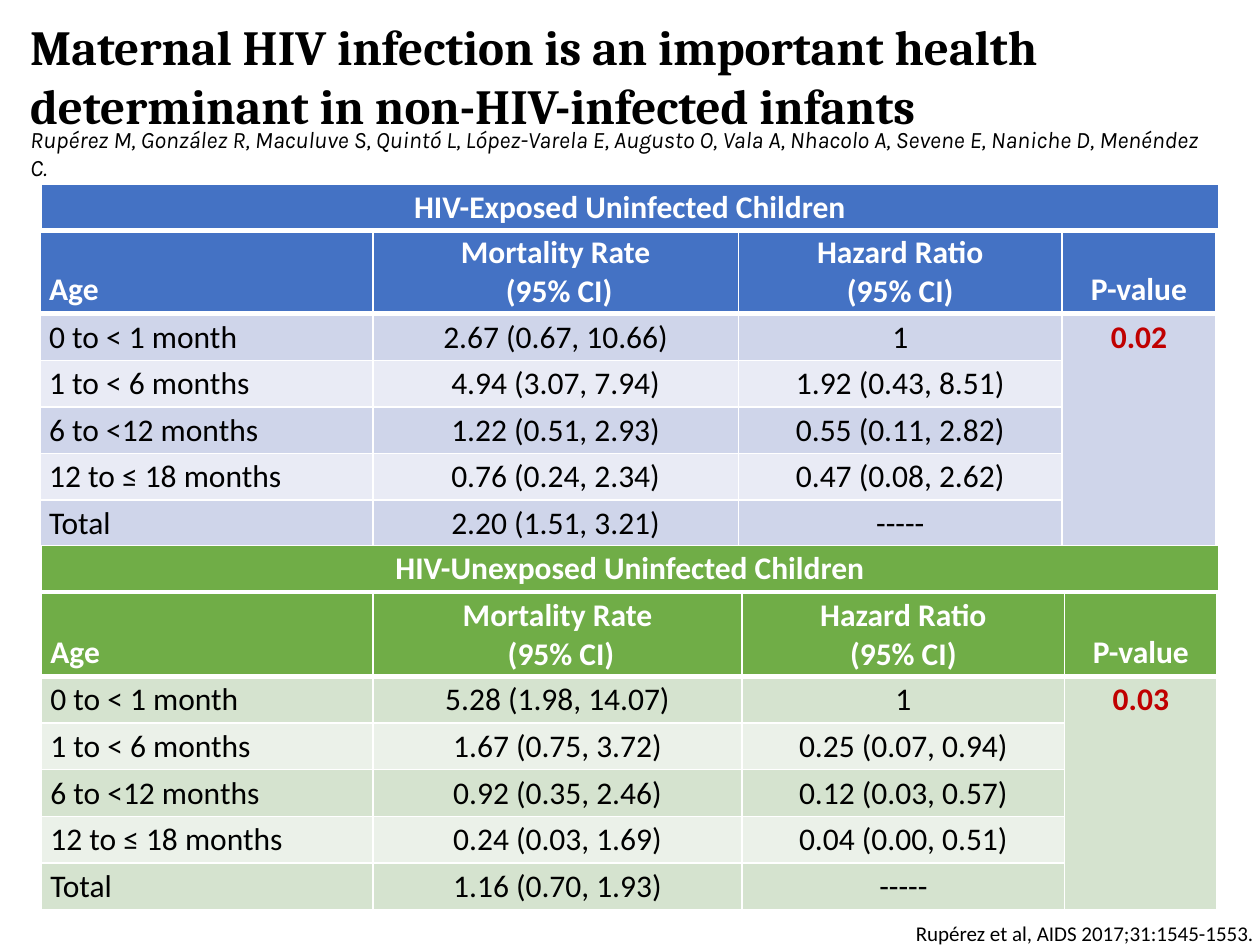
from dataclasses import dataclass

import pptx
import pptx.dml.color
import pptx.enum.text
import pptx.oxml
import pptx.oxml.ns
import pptx.util
from pptx.util import Inches

COLORS = {
    "white": "FFFFFF", "black": "000000", "p_value": "C00000",
    "blue": "4472C4", "blue_dark": "CFD5EA", "blue_light": "E9EBF5",
    "green": "70AD47", "green_dark": "D5E3CF", "green_light": "EBF1E9",
}
AGES = ["0 to < 1 month", "1 to < 6 months", "6 to <12 months",
        "12 to ≤ 18 months", "Total"]
HEADINGS = ["Age", "Mortality Rate\n (95% CI)", "Hazard Ratio\n(95% CI)", "P-value"]
HEADER_HEIGHT, ROW_HEIGHT = 0.67, 0.37
ALIGN = pptx.enum.text.PP_ALIGN
ANCHOR = pptx.enum.text.MSO_ANCHOR


@dataclass
class Cohort:
    name: str
    color: str
    banner_top: float
    left: float
    top: float
    widths: list[float]
    mortality: list[str]
    hazard: list[str]
    p_value: str


@dataclass
class Caption:
    text: str
    box: tuple[float, float, float, float]
    font: str
    size: float
    bold: bool = False
    italic: bool = False


COHORTS = [
    Cohort("HIV-Exposed Uninfected Children", "blue", 1.46, 0.32, 1.82,
           [2.64, 2.9, 2.57, 1.22],
           ["2.67 (0.67, 10.66)", "4.94 (3.07, 7.94)", "1.22 (0.51, 2.93)",
            "0.76 (0.24, 2.34)", "2.20 (1.51, 3.21)"],
           ["1", "1.92 (0.43, 8.51)", "0.55 (0.11, 2.82)",
            "0.47 (0.08, 2.62)", "-----"], "0.02"),
    Cohort("HIV-Unexposed Uninfected Children", "green", 4.33, 0.33, 4.7,
           [2.63, 2.93, 2.56, 1.21],
           ["5.28 (1.98, 14.07)", "1.67 (0.75, 3.72)", "0.92 (0.35, 2.46)",
            "0.24 (0.03, 1.69)", "1.16 (0.70, 1.93)"],
           ["1", "0.25 (0.07, 0.94)", "0.12 (0.03, 0.57)",
            "0.04 (0.00, 0.51)", "-----"], "0.03"),
]
CAPTIONS = [
    Caption("Maternal HIV infection is an important health determinant "
            "in non-HIV-infected infants",
            (0.14, 0.08, 9.47, 1.04), "Cambria", 28, bold=True),
    Caption("Rupérez M, González R, Maculuve S, Quintó L, López-Varela E, Augusto O, "
            "Vala A, Nhacolo A, Sevene E, Naniche D, Menéndez C.",
            (0.14, 0.94, 9.61, 0.56), "Karla", 13.5, italic=True),
    Caption("Rupérez et al, AIDS 2017;31:1545-1553.",
            (7.17, 7.26, 2.91, 0.3), "Calibri", 12),
]


def rgb(name: str) -> pptx.dml.color.RGBColor:
    return pptx.dml.color.RGBColor.from_string(COLORS[name])


def style_font(font, name: str, size: float, color: str, bold: bool) -> None:
    font.name, font.size, font.bold = name, pptx.util.Pt(size), bold
    font.color.rgb = rgb(color)


def add_caption(slide, caption: Caption) -> None:
    tf = slide.shapes.add_textbox(*map(Inches, caption.box)).text_frame
    tf.word_wrap = True
    p = tf.paragraphs[0]
    p.text = caption.text
    style_font(p.font, caption.font, caption.size, "black", caption.bold)
    p.font.italic = caption.italic


def add_borders(cell, bottom: float) -> None:
    """White 1 pt edges, with the bottom one in its own width in points."""
    tc_pr = cell._tc.get_or_add_tcPr()
    for i, (side, width) in enumerate(zip("LRTB", (1, 1, 1, bottom))):
        tc_pr.insert(i, pptx.oxml.parse_xml(
            f'<a:ln{side} {pptx.oxml.ns.nsdecls("a")} w="{pptx.util.Pt(width)}">'
            f'<a:solidFill><a:srgbClr val="{COLORS["white"]}"/></a:solidFill>'
            f'</a:ln{side}>'))


def fill_cell(cell, text: str, fill: str, color: str = "black", bold: bool = False,
              centred: bool = True, low: bool = False, bottom: float = 1) -> None:
    cell.fill.solid()
    cell.fill.fore_color.rgb = rgb(fill)
    cell.margin_left = cell.margin_right = Inches(0.07)
    cell.margin_top = cell.margin_bottom = pptx.util.Pt(2.5)
    cell.vertical_anchor = ANCHOR.BOTTOM if low else ANCHOR.TOP
    cell.text = text
    for p in cell.text_frame.paragraphs:
        p.alignment = ALIGN.CENTER if centred else ALIGN.LEFT
        style_font(p.font, "Calibri", 18, color, bold)
    add_borders(cell, bottom)


def add_grid(slide, left: float, top: float, widths: list[float], heights: list[float]):
    table = slide.shapes.add_table(
        len(heights), len(widths), Inches(left), Inches(top),
        Inches(sum(widths)), Inches(sum(heights))).table
    for column, width in zip(table.columns, widths):
        column.width = Inches(width)
    for row, height in zip(table.rows, heights):
        row.height = Inches(height)
    return table


def add_banner(slide, cohort: Cohort) -> None:
    table = add_grid(slide, 0.33, cohort.banner_top, [9.34], [ROW_HEIGHT])
    fill_cell(table.cell(0, 0), cohort.name, cohort.color, "white", bold=True, bottom=3)


def add_results(slide, cohort: Cohort) -> None:
    table = add_grid(slide, cohort.left, cohort.top, cohort.widths,
                     [HEADER_HEIGHT] + [ROW_HEIGHT] * len(AGES))
    for col, heading in enumerate(HEADINGS):
        fill_cell(table.cell(0, col), heading, cohort.color, "white", bold=True,
                  centred=col > 0, low="\n" not in heading, bottom=3)
    for row, values in enumerate(zip(AGES, cohort.mortality, cohort.hazard), 1):
        band = cohort.color + ("_dark" if row % 2 else "_light")
        for col, value in enumerate(values):
            fill_cell(table.cell(row, col), value, band, centred=col > 0)
    p_cell = table.cell(1, 3)
    p_cell.merge(table.cell(len(AGES), 3))
    fill_cell(p_cell, cohort.p_value, cohort.color + "_dark", "p_value", bold=True)


def main() -> None:
    prs = pptx.Presentation()
    prs.slide_width, prs.slide_height = Inches(10), Inches(7.5)
    slide = prs.slides.add_slide(prs.slide_layouts[6])
    for caption in CAPTIONS:
        add_caption(slide, caption)
    for cohort in COHORTS:
        add_results(slide, cohort)
        add_banner(slide, cohort)
    prs.save("out.pptx")


if __name__ == "__main__":
    main()
